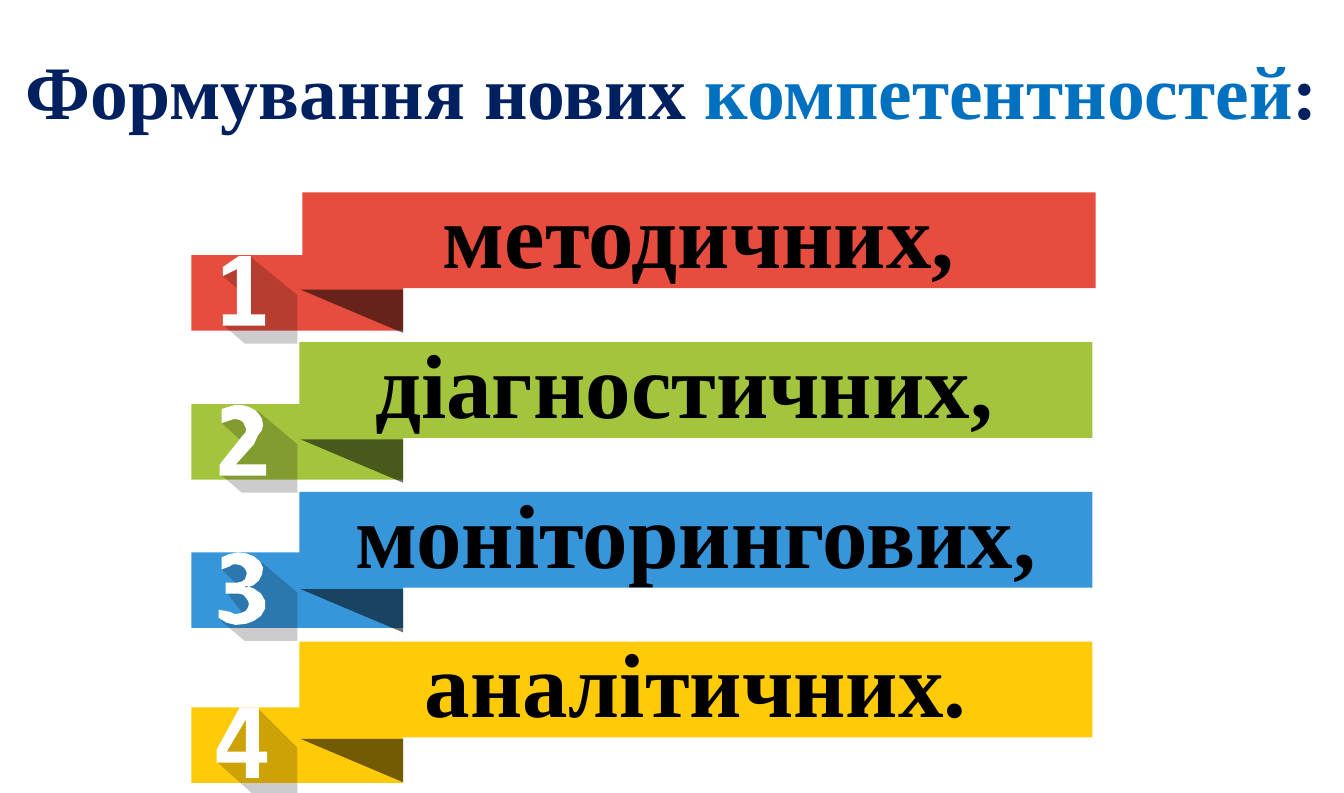
from math import cos, radians, sin

from lxml import etree
from pptx import Presentation
from pptx.dml.color import RGBColor
from pptx.enum.shapes import MSO_SHAPE as Shape
from pptx.enum.text import MSO_ANCHOR as Anchor, PP_ALIGN as Align
from pptx.oxml.ns import qn
from pptx.util import Pt

NAVY = RGBColor(0x00, 0x20, 0x60)
BLUE = RGBColor(0x00, 0x70, 0xC0)
BLACK = RGBColor(0x00, 0x00, 0x00)
WHITE = RGBColor(0xFF, 0xFF, 0xFF)
RED = RGBColor(0xE6, 0x4D, 0x3E)
GREEN = RGBColor(0xA3, 0xC4, 0x3D)
SKY = RGBColor(0x37, 0x96, 0xDA)
YELLOW = RGBColor(0xFF, 0xCB, 0x08)
FONT = "Times New Roman"

SLIDE_WIDTH, SLIDE_HEIGHT = 960, 566.6
TAG_LEFT, TAG_WIDTH, TAG_HEIGHT = 136.8, 151.2, 54
FOLD_WIDTH, FOLD_HEIGHT = 73.4, 31
BANNER_TOP, BANNER_PITCH = 137.5, 107
BANNER_WIDTH, BANNER_HEIGHT = 566.6, 68.4
OUTLINE_UNIT = 0.72
ARC_STEPS = 10


def arc(center_x, center_y, radius_x, radius_y, start, end):
    """Return points along an ellipse, angles in degrees clockwise from the right."""
    angles = [radians(start + (end - start) * step / ARC_STEPS)
              for step in range(ARC_STEPS + 1)]
    return [(center_x + radius_x * cos(angle), center_y + radius_y * sin(angle))
            for angle in angles]


def paint(shape, color, opacity=100):
    """Give the shape a flat fill, opacity in percent, with no line or shadow."""
    shape.shadow.inherit = False
    shape.line.fill.background()
    shape.fill.solid()
    shape.fill.fore_color.rgb = color
    if opacity < 100:
        color_element = shape.fill._xPr.find(".//" + qn("a:srgbClr"))
        etree.SubElement(color_element, qn("a:alpha"), val=str(opacity * 1000))


# Outlines are in outline units from the top left corner of the tag
ONE = [(47, 1), (59, 1), (59, 59), (73, 59), (73, 70), (31, 70), (31, 59),
       (45, 59), (45, 14), (31, 21), (31, 12)]
TWO = [*arc(46, 20, 25, 19, -130, 35), (62, 40), (44, 60), (74, 60), (74, 71),
       (28, 71), (28, 60), *arc(43, 25, 11, 10, 40, -110), (30, 19)]
THREE = [*arc(47, 18, 24, 18, -135, 75), *arc(47, 52, 26, 20, -75, 140), (27, 57),
         *arc(45, 51, 12, 10, 125, -80), (34, 41), (34, 30),
         *arc(44, 21, 11, 9, 80, -125), (30, 17)]
FOUR = [(48, 0), (67, 0), (67, 44), (75, 44), (75, 55), (67, 55), (67, 70), (54, 70),
        (54, 55), (25, 55), (25, 42), (48, 0), (54, 12), (35, 44), (54, 44), (54, 12)]

# Every shadow runs to the same right edge, then returns beneath its digit
SHADOW_EDGE = [(105, 40), (105, 88)]
SHADOW_ONE = [(59, 2), *SHADOW_EDGE, (53, 88), (32, 70), (45, 59), (45, 33), (31, 21),
              (45, 14)]
SHADOW_TWO = [(66, 7), *SHADOW_EDGE, (50, 88), (29, 70), (50, 37), (30, 19), (45, 9)]
SHADOW_THREE = [(65, 6), *SHADOW_EDGE, (53, 88), (29, 68), (52, 62), (35, 40), (45, 32),
                (30, 17), (45, 7)]
SHADOW_FOUR = [(67, 2), *SHADOW_EDGE, (63, 88), (26, 55), (50, 7)]

# Word, colour, banner left, tag top, shadow, digit
ROWS = [
    ("методичних,", RED, 216, 182.2, SHADOW_ONE, ONE),
    ("діагностичних, ", GREEN, 213.8, 288.7, SHADOW_TWO, TWO),
    ("моніторингових,", SKY, 213.8, 394.6, SHADOW_THREE, THREE),
    ("аналітичних.", YELLOW, 213.8, 505.4, SHADOW_FOUR, FOUR),
]

presentation = Presentation()
presentation.slide_width = Pt(SLIDE_WIDTH)
presentation.slide_height = Pt(SLIDE_HEIGHT)
slide = presentation.slides.add_slide(presentation.slide_layouts[5])
shapes = slide.shapes

title = shapes.title
title.left, title.top, title.width, title.height = Pt(0), Pt(16.6), Pt(SLIDE_WIDTH), Pt(85)
title_frame = title.text_frame
title_frame.word_wrap = True
title_frame.vertical_anchor = Anchor.MIDDLE
title_frame.margin_left = title_frame.margin_right = Pt(10)
title_frame.margin_top = title_frame.margin_bottom = Pt(5)
paragraph = title_frame.paragraphs[0]
paragraph.alignment = Align.CENTER
paragraph.line_spacing = Pt(74.6)
for text, color in [("Формування нових ", NAVY), ("компетентностей", BLUE), (":", NAVY)]:
    run = paragraph.add_run()
    run.text = text
    run.font.name = FONT
    run.font.size = Pt(54)
    run.font.bold = True
    run.font.color.rgb = color

for index, (word, color, banner_left, tag_top, shadow, digit) in enumerate(ROWS):
    banner_top = BANNER_TOP + index * BANNER_PITCH

    tag = shapes.add_shape(Shape.RECTANGLE, Pt(TAG_LEFT), Pt(tag_top),
                           Pt(TAG_WIDTH), Pt(TAG_HEIGHT))
    paint(tag, color)

    fold = shapes.add_shape(Shape.RIGHT_TRIANGLE, Pt(TAG_LEFT + TAG_WIDTH - FOLD_WIDTH),
                            Pt(banner_top + BANNER_HEIGHT + 1),
                            Pt(FOLD_WIDTH), Pt(FOLD_HEIGHT))
    fold.rotation = 180
    paint(fold, BLACK, 55)

    banner = shapes.add_shape(Shape.RECTANGLE, Pt(banner_left), Pt(banner_top),
                              Pt(BANNER_WIDTH), Pt(BANNER_HEIGHT))
    paint(banner, color)
    frame = banner.text_frame
    frame.word_wrap = True
    frame.vertical_anchor = Anchor.MIDDLE
    frame.margin_left = frame.margin_right = Pt(19.4)
    frame.margin_top, frame.margin_bottom = Pt(0), Pt(11.5)
    frame.text = word
    paragraph = frame.paragraphs[0]
    paragraph.alignment = Align.CENTER
    font = paragraph.runs[0].font
    font.name = FONT
    font.size = Pt(65)
    font.bold = True
    font.color.rgb = BLACK

    for outline, outline_color, opacity in [(shadow, BLACK, 20), (digit, WHITE, 100)]:
        builder = shapes.build_freeform(*outline[0], scale=Pt(OUTLINE_UNIT))
        builder.add_line_segments(outline[1:], close=True)
        paint(builder.convert_to_shape(Pt(TAG_LEFT), Pt(tag_top)), outline_color, opacity)

presentation.save("out.pptx")
